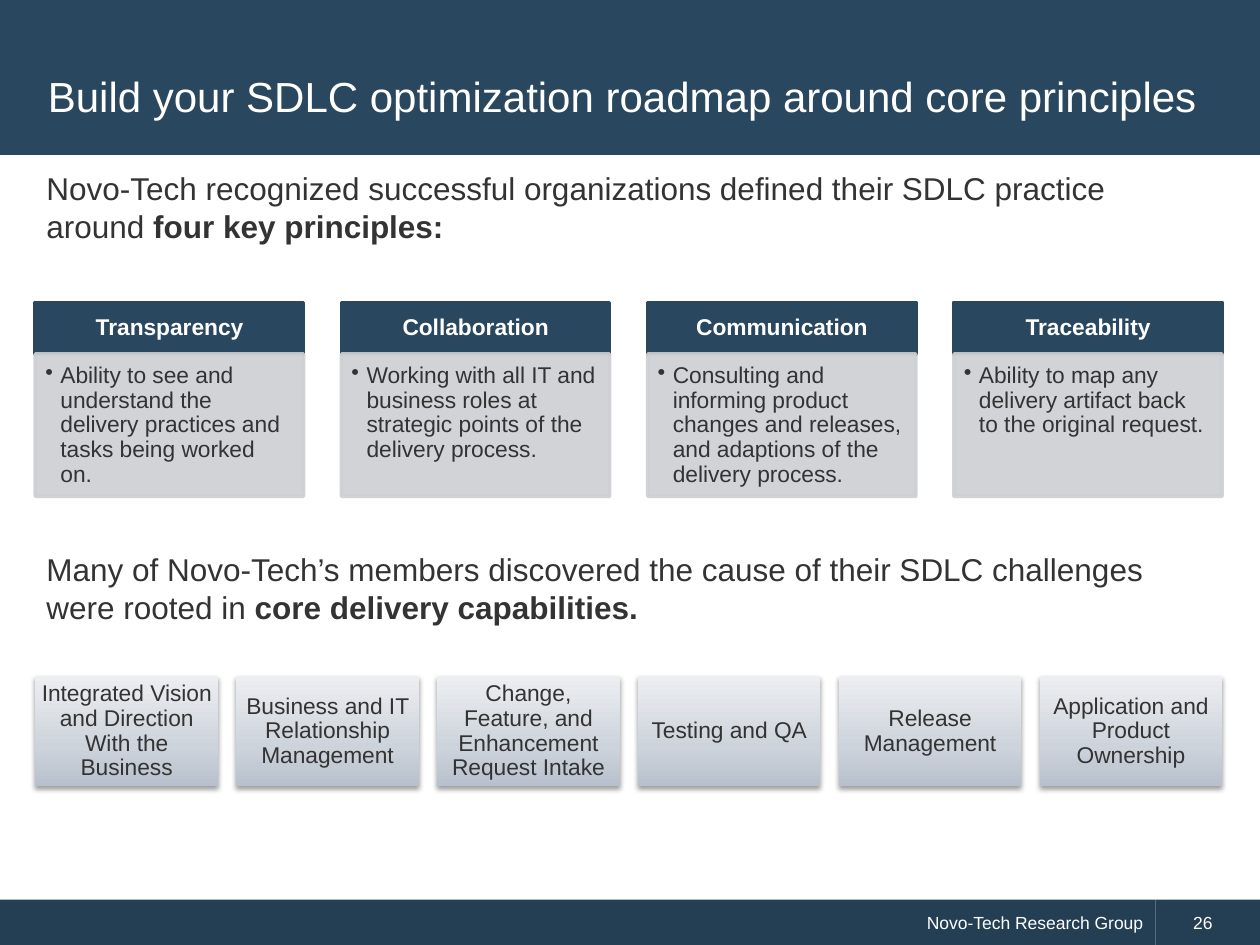
"""Build the SDLC optimization roadmap slide."""
from dataclasses import dataclass
from typing import Any

from lxml import etree
from pptx import Presentation
from pptx import util as u
from pptx.dml.color import RGBColor
from pptx.enum import shapes, text
from pptx.oxml import ns

COLORS = {
    "navy": "29475F", "footer": "243F54", "panel": "CDCFD2",
    "text": "333333", "white": "FFFFFF", "shadow": "000000",
}
TILE_STOPS = {0: "B7C0CC", 35: "CDD3DB", 100: "ECEEF1"}
FONT = "Arial"
LEFT, RIGHT = 0.28, 9.7
MIDDLE, TOP = text.MSO_ANCHOR.MIDDLE, text.MSO_ANCHOR.TOP
ALIGN = text.PP_ALIGN


@dataclass
class Box:
    left: float
    top: float
    width: float
    height: float

    def lengths(self) -> list[int]:
        return [u.Inches(value) for value in (self.left, self.top, self.width, self.height)]


@dataclass
class Principle:
    name: str
    description: str


@dataclass
class Statement:
    top: float
    lead: str
    emphasis: str


PRINCIPLES = [
    Principle("Transparency", "Ability to see and understand the delivery practices and tasks being worked on."),
    Principle("Collaboration", "Working with all IT and business roles at strategic points of the delivery process."),
    Principle("Communication", "Consulting and informing product changes and releases, and adaptions of the delivery process."),
    Principle("Traceability", "Ability to map any delivery artifact back to the original request."),
]
CAPABILITIES = [
    "Integrated Vision and Direction With the Business",
    "Business and IT Relationship Management",
    "Change, Feature, and Enhancement Request Intake",
    "Testing and QA",
    "Release Management",
    "Application and Product Ownership",
]
STATEMENTS = [
    Statement(1.29, "Novo-Tech recognized successful organizations defined their SDLC practice around ",
              "four key principles:"),
    Statement(4.32, "Many of Novo-Tech’s members discovered the cause of their SDLC challenges were rooted in ",
              "core delivery capabilities."),
]


def set_values(target: Any, values: dict[str, Any]) -> None:
    for name, value in values.items():
        setattr(target, name, value)


def add_element(parent: Any, tag: str, **attributes: Any) -> Any:
    values = {name: str(value) for name, value in attributes.items()}
    return etree.SubElement(parent, ns.qn(tag), values)


def set_frame(shape: Any, anchor: Any, insets: tuple[float, ...] = (0.1, 0.05, 0.1, 0.05)) -> None:
    sides = ("margin_left", "margin_top", "margin_right", "margin_bottom")
    set_values(shape.text_frame, {
        "word_wrap": True, "auto_size": text.MSO_AUTO_SIZE.NONE, "vertical_anchor": anchor,
        **{side: u.Inches(inset) for side, inset in zip(sides, insets)},
    })


def add_run(paragraph: Any, words: str, size: float, color: str, bold: bool = False) -> None:
    run = paragraph.add_run()
    run.text = words
    set_values(run.font, {"name": FONT, "size": u.Pt(size), "bold": bold})
    run.font.color.rgb = RGBColor.from_string(COLORS[color])


def write(shape: Any, words: str, size: float, color: str, bold: bool = False, **layout: Any) -> Any:
    paragraph = shape.text_frame.paragraphs[0]
    set_values(paragraph, layout)
    add_run(paragraph, words, size, color, bold)
    return paragraph


def add_rectangle(slide: Any, box: Box, color: str, outlined: bool = False) -> Any:
    shape = slide.shapes.add_shape(shapes.MSO_SHAPE.RECTANGLE, *box.lengths())
    shape.shadow.inherit = False
    shape.fill.solid()
    shape.fill.fore_color.rgb = RGBColor.from_string(COLORS[color])
    if outlined:
        shape.line.color.rgb = RGBColor.from_string(COLORS[color])
        shape.line.width = u.Pt(2)
    else:
        shape.line.fill.background()
    return shape


def add_title(slide: Any, words: str) -> None:
    banner = add_rectangle(slide, Box(0, 0, 10, 1.23), "navy")
    slide.shapes._spTree.insert(2, banner._element)
    title = slide.shapes.title
    set_values(title, dict(zip(("left", "top", "width", "height"), Box(0.28, 0.28, 9.43, 0.96).lengths())))
    set_frame(title, MIDDLE)
    write(title, words, 24, "white", alignment=ALIGN.LEFT)


def add_footer(slide: Any) -> None:
    owner = add_rectangle(slide, Box(0, 7.14, 9.17, 0.36), "footer")
    set_frame(owner, MIDDLE)
    write(owner, "Novo-Tech Research Group", 10, "white", alignment=ALIGN.RIGHT)
    number = add_rectangle(slide, Box(9.17, 7.14, 0.83, 0.36), "footer")
    set_frame(number, MIDDLE, (0.3, 0.05, 0.1, 0.05))
    write(number, "26", 10, "white", alignment=ALIGN.LEFT)


def add_statement(slide: Any, statement: Statement) -> None:
    box = slide.shapes.add_textbox(*Box(0.27, statement.top, 9.44, 0.73).lengths())
    set_frame(box, TOP)
    paragraph = write(box, statement.lead, 18, "text", space_before=u.Pt(3.6))
    add_run(paragraph, statement.emphasis, 18, "text", bold=True)


def add_principle(slide: Any, principle: Principle, left: float, width: float) -> None:
    header = add_rectangle(slide, Box(left, 2.4, width, 0.41), "navy", outlined=True)
    set_frame(header, MIDDLE, (0.1, 0.06, 0.1, 0.06))
    write(header, principle.name, 13, "white", bold=True, alignment=ALIGN.CENTER, line_spacing=0.9)

    panel = add_rectangle(slide, Box(left, 2.81, width, 1.13), "panel", outlined=True)
    for color in panel._element.spPr.iter(ns.qn("a:srgbClr")):
        add_element(color, "a:alpha", val=90000)
    set_frame(panel, TOP, (0.08, 0.08, 0.1, 0.11))
    paragraph = write(panel, principle.description, 13, "text", alignment=ALIGN.LEFT, line_spacing=0.9)
    properties = paragraph._p.get_or_add_pPr()
    properties.set("marL", str(u.Inches(0.12)))
    properties.set("indent", str(u.Inches(-0.12)))
    add_element(properties, "a:buChar", char="•")


def add_capability(slide: Any, name: str, left: float, width: float) -> None:
    tile = add_rectangle(slide, Box(left, 5.37, width, 0.87), "panel")
    tile.fill.gradient()
    tile.fill.gradient_angle = 90
    properties = tile._element.spPr
    stops = properties.find(".//" + ns.qn("a:gsLst"))
    for stop in list(stops):
        stops.remove(stop)
    for position, color in TILE_STOPS.items():
        add_element(add_element(stops, "a:gs", pos=position * 1000), "a:srgbClr", val=color)
    shadow = add_element(properties.find(ns.qn("a:effectLst")), "a:outerShdw", blurRad=u.Pt(3.1),
                         dist=u.Pt(1.6), dir=5400000, rotWithShape=0)
    add_element(add_element(shadow, "a:srgbClr", val=COLORS["shadow"]), "a:alpha", val=38000)
    set_frame(tile, MIDDLE, (0.05,) * 4)
    write(tile, name, 13, "text", alignment=ALIGN.CENTER, line_spacing=0.9)


def add_row(slide: Any, items: list, width: float, draw: Any) -> None:
    step = (RIGHT - LEFT - width) / (len(items) - 1)
    for index, item in enumerate(items):
        draw(slide, item, LEFT + index * step, width)


def main() -> None:
    presentation = Presentation()
    set_values(presentation, {"slide_width": u.Inches(10), "slide_height": u.Inches(7.5)})
    slide = presentation.slides.add_slide(presentation.slide_layouts[5])
    add_footer(slide)
    add_title(slide, "Build your SDLC optimization roadmap around core principles")
    for statement in STATEMENTS:
        add_statement(slide, statement)
    add_row(slide, PRINCIPLES, 2.13, add_principle)
    add_row(slide, CAPABILITIES, 1.45, add_capability)
    presentation.save("out.pptx")


if __name__ == "__main__":
    main()
